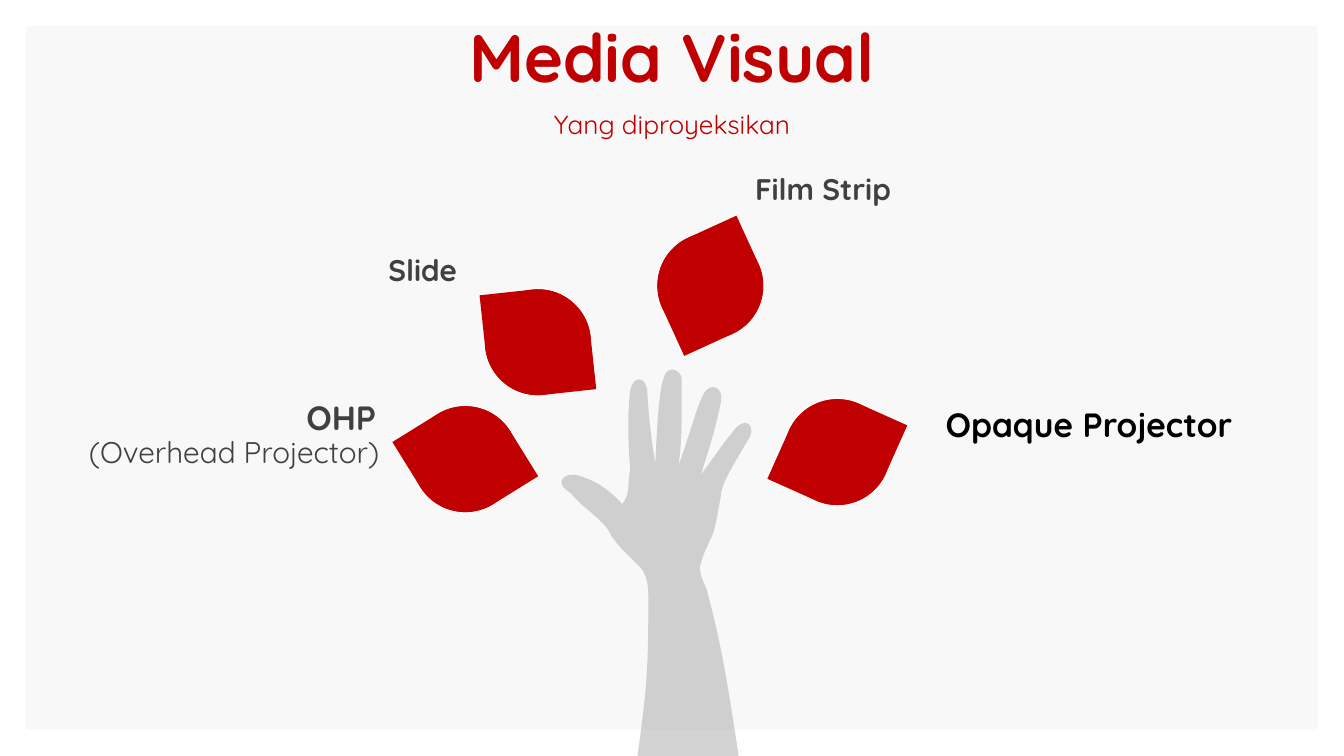
from lxml import etree
from pptx import Presentation
from pptx.dml.color import RGBColor
from pptx.enum import shapes, text
from pptx.oxml.ns import qn
from pptx.util import Inches, Pt

COLORS = {"panel": "F8F8F8", "hand": "BFBFBF", "accent": "C00000",
          "label": "404040", "strong": "000000"}
FONT = "Quicksand"
LEAF_SIZE = 1.05

# left, top, rotation of the first of two opposite teardrops
LEAVES = [(4.09, 4.03, 58.2), (4.81, 2.87, 83.8),
          (6.52, 2.31, 155.4), (7.78, 3.96, 204.1)]

LEFT, RIGHT = text.PP_ALIGN.LEFT, text.PP_ALIGN.RIGHT
LABELS = [
    ("Film Strip", (7.39, 1.64, 4.26, 0.46), dict(size=21.3, align=LEFT)),
    ("(Overhead Projector)", (-0.59, 4.25, 4.45, 0.46),
     dict(size=21.3, align=RIGHT, bold=False)),
    ("OHP", (-0.58, 3.89, 4.41, 0.5), dict(size=24, align=RIGHT)),
    ("Opaque Projector", (9.28, 3.96, 3.12, 0.5),
     dict(size=24, align=LEFT, color="strong", wrap=False)),
    ("Slide", (3.74, 2.45, 0.89, 0.46),
     dict(size=21.3, align=RIGHT, wrap=False)),
]

HAND_LEFT, HAND_TOP, HAND_RIGHT, HAND_BOTTOM = 5.57, 3.67, 7.46, 7.53
ARM_START, ARM_CORNER = (6.32, 7.53), (7.33, 7.52)
# each row: two control points and the end point of a Bezier curve
HAND_CURVES = [
    (7.23, 6.89, 7.18, 6.5, 7.02, 5.89), (7, 5.8, 6.95, 5.75, 6.94, 5.63),
    (6.99, 5.43, 7.03, 5.41, 7.08, 5.27), (7.12, 5.1, 7.12, 5.08, 7.15, 4.92),
    (7.14, 4.81, 7.33, 4.52, 7.44, 4.33), (7.49, 4.21, 7.38, 4.13, 7.28, 4.27),
    (7.2, 4.36, 7.05, 4.58, 6.95, 4.71), (7.03, 4.47, 7.1, 4.24, 7.15, 3.99),
    (7.18, 3.85, 7.06, 3.79, 6.99, 3.89), (6.92, 3.99, 6.8, 4.45, 6.73, 4.61),
    (6.77, 4.35, 6.76, 4.03, 6.76, 3.75), (6.76, 3.69, 6.62, 3.59, 6.58, 3.76),
    (6.53, 3.89, 6.51, 4.37, 6.5, 4.6), (6.46, 4.36, 6.43, 4.11, 6.42, 3.88),
    (6.4, 3.71, 6.27, 3.74, 6.25, 3.88), (6.22, 4.15, 6.23, 4.39, 6.25, 4.65),
    (6.22, 4.84, 6.25, 4.91, 6.17, 5), (6.06, 4.88, 5.92, 4.76, 5.7, 4.71),
    (5.56, 4.7, 5.51, 4.81, 5.66, 4.89), (5.76, 5.03, 6, 5.16, 6.06, 5.31),
    (6.16, 5.46, 6.26, 5.53, 6.36, 5.64), (6.44, 5.74, 6.43, 5.88, 6.43, 6.02),
    (6.43, 6.69, 6.41, 6.84, 6.32, 7.53),
]


def rgb(name):
    return RGBColor.from_string(COLORS[name])


def paint(shape, color, opacity=100):
    shape.shadow.inherit = False
    shape.line.fill.background()
    shape.fill.solid()
    shape.fill.fore_color.rgb = rgb(color)
    if opacity < 100:
        tint = shape._element.spPr.find(".//" + qn("a:srgbClr"))
        etree.SubElement(tint, qn("a:alpha"), val=str(opacity * 1000))


def write(holder, words, size, color="label", bold=True, align=LEFT, wrap=True,
          anchor=text.MSO_ANCHOR.TOP, fit=text.MSO_AUTO_SIZE.SHAPE_TO_FIT_TEXT,
          space_before=0, line_spacing=1.0):
    frame = holder.text_frame
    frame.word_wrap, frame.auto_size, frame.vertical_anchor = wrap, fit, anchor
    paragraph = frame.paragraphs[0]
    paragraph.alignment = align
    paragraph.space_before = Pt(space_before)
    paragraph.line_spacing = line_spacing
    run = paragraph.add_run()
    run.text = words
    run.font.name, run.font.size, run.font.bold = FONT, Pt(size), bold
    run.font.color.rgb = rgb(color)


def add_panel(slide):
    box = [Inches(v) for v in (0.26, 0.26, 12.81, 6.98)]
    paint(slide.shapes.add_shape(shapes.MSO_SHAPE.RECTANGLE, *box), "panel")


def add_step(outline, kind, *coords):
    """Append one drawing step, measured from the hand's top left corner."""
    step = etree.SubElement(outline, qn("a:" + kind))
    for x, y in zip(coords[::2], coords[1::2]):
        etree.SubElement(step, qn("a:pt"), x=str(Inches(x - HAND_LEFT)),
                         y=str(Inches(y - HAND_TOP)))


def add_hand(slide):
    builder = slide.shapes.build_freeform(Inches(HAND_LEFT), Inches(HAND_TOP))
    builder.add_line_segments([(Inches(HAND_RIGHT), Inches(HAND_BOTTOM))])
    hand = builder.convert_to_shape()
    outline = hand._element.spPr.find(".//" + qn("a:path"))
    for step in list(outline):
        outline.remove(step)
    add_step(outline, "moveTo", *ARM_START)
    add_step(outline, "lnTo", *ARM_CORNER)
    for curve in HAND_CURVES:
        add_step(outline, "cubicBezTo", *curve)
    add_step(outline, "close")
    paint(hand, "hand", opacity=70)


def place_heading(holder, words, top, height, **style):
    """Move a placeholder in front of the panel and fill it."""
    tree = holder._element.getparent()
    tree.append(holder._element)
    holder.left, holder.top = Inches(0), Inches(top)
    holder.width, holder.height = Inches(13.33), Inches(height)
    write(holder, words, color="accent", align=text.PP_ALIGN.CENTER,
          anchor=text.MSO_ANCHOR.MIDDLE, fit=text.MSO_AUTO_SIZE.NONE,
          space_before=9, **style)


def add_leaf(slide, left, top, angle):
    group = slide.shapes.add_group_shape()
    for turn in (angle, (angle + 180) % 360):
        half = group.shapes.add_shape(
            shapes.MSO_SHAPE.TEAR, Inches(left), Inches(top),
            Inches(LEAF_SIZE), Inches(LEAF_SIZE))
        half.rotation = turn
        paint(half, "accent")


def add_label(slide, words, box, style):
    write(slide.shapes.add_textbox(*(Inches(v) for v in box)), words, **style)


def main():
    deck = Presentation()
    deck.slide_width, deck.slide_height = Inches(13.33), Inches(7.5)
    slide = deck.slides.add_slide(deck.slide_layouts[0])
    title, subtitle = slide.placeholders
    add_panel(slide)
    add_hand(slide)
    place_heading(title, "Media Visual", 0.18, 0.84, size=48, line_spacing=0.9)
    place_heading(subtitle, "Yang diproyeksikan", 1.02, 0.42,
                  size=18.7, bold=False)
    for leaf in LEAVES:
        add_leaf(slide, *leaf)
    for label in LABELS:
        add_label(slide, *label)
    deck.save("out.pptx")


if __name__ == "__main__":
    main()
